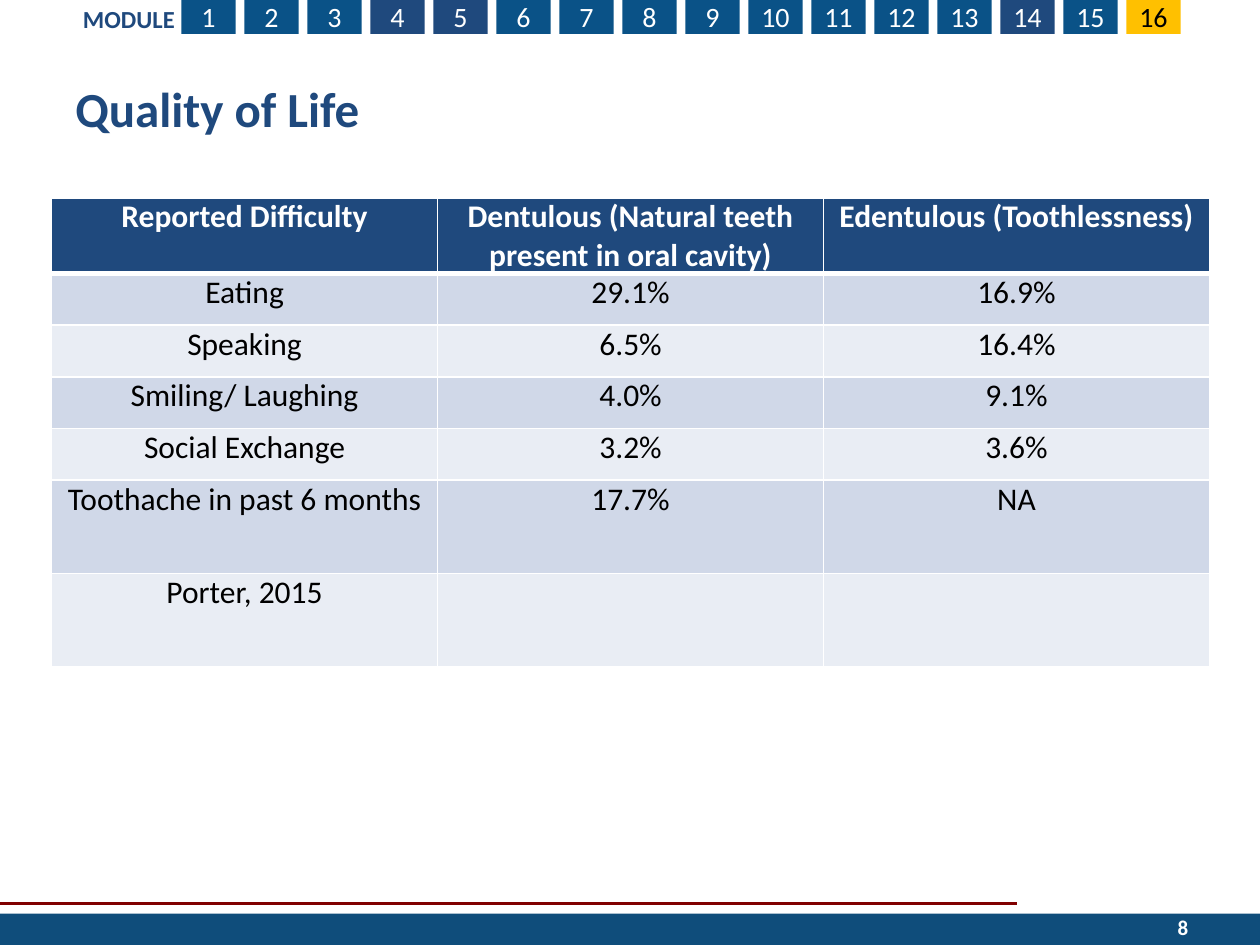
import pptx
import pptx.util
import pptx.dml.color
import pptx.enum.shapes
import pptx.enum.text
import pptx.oxml
import pptx.oxml.ns
from lxml import etree

WIDE, HIGH = 10, 7.5
NAVY, BLUE, GOLD, WHITE, BLACK = "1F497D", "0A5287", "FFC000", "FFFFFF", "000000"
BANDS = "E9EDF4", "D0D8E8"
ALIGN = pptx.enum.text.PP_ALIGN
ANCHOR = pptx.enum.text.MSO_ANCHOR
ROWS = [
    ("Reported Difficulty", "Dentulous (Natural teeth present in oral cavity)",
     "Edentulous (Toothlessness)"),
    ("Eating", "29.1%", "16.9%"),
    ("Speaking", "6.5%", "16.4%"),
    ("Smiling/ Laughing", "4.0%", "9.1%"),
    ("Social Exchange", "3.2%", "3.6%"),
    ("Toothache in past 6 months", "17.7%", "NA"),
    ("Porter, 2015", "", ""),
]
HEIGHTS = [0.6] + [0.41] * 4 + [0.74] * 2


def inch(*sizes):
    """Turn numbers into a list of lengths in inches."""
    return [pptx.util.Inches(size) for size in sizes]


def tint(code):
    """Turn a hex string into a colour."""
    return pptx.dml.color.RGBColor.from_string(code)


def write(frame, text, size, color, bold=False, align=ALIGN.LEFT):
    """Put one styled paragraph in a text frame."""
    para = frame.paragraphs[0]
    para.text = text
    para.alignment = align
    font = para.font
    font.name, font.size, font.bold = "Calibri", pptx.util.Pt(size), bold
    font.color.rgb = tint(color)


def block(slide, box, fill):
    """Draw a plain filled rectangle."""
    kind = pptx.enum.shapes.MSO_SHAPE.RECTANGLE
    shape = slide.shapes.add_shape(kind, *inch(*box))
    shape.shadow.inherit = False
    shape.fill.solid()
    shape.fill.fore_color.rgb = tint(fill)
    shape.line.fill.background()
    return shape


def label(slide, box, text, size, color, anchor=ANCHOR.MIDDLE, align=ALIGN.LEFT):
    """Add a bold line of text."""
    frame = slide.shapes.add_textbox(*inch(*box)).text_frame
    frame.word_wrap = True
    frame.vertical_anchor = anchor
    write(frame, text, size, color, True, align)


def rule(slide, ends, color, width):
    """Draw a straight line without a shadow."""
    kind = pptx.enum.shapes.MSO_CONNECTOR.STRAIGHT
    line = slide.shapes.add_connector(kind, *inch(*ends))
    line.line.color.rgb = tint(color)
    line.line.width = pptx.util.Pt(width)
    props = line._element.spPr
    etree.SubElement(props, pptx.oxml.ns.qn("a:effectLst"))


def tabs(slide):
    """Draw the row of module numbers, the current one in gold."""
    for num in range(1, 17):
        fill = GOLD if num == 16 else NAVY if num in (4, 5, 14) else BLUE
        shape = block(slide, (0.94 + num / 2, -0.01, 0.43, 0.28), fill)
        frame = shape.text_frame
        frame.margin_left = frame.margin_right = 0
        frame.margin_top = frame.margin_bottom = 0
        frame.vertical_anchor = ANCHOR.MIDDLE
        write(frame, str(num), 16, BLACK if num == 16 else WHITE, align=ALIGN.CENTER)


def edge(cell, side, width):
    """Give one side of a cell a white border."""
    props = cell._tc.get_or_add_tcPr()
    line = etree.SubElement(props, pptx.oxml.ns.qn("a:ln" + side))
    line.set("w", str(pptx.util.Pt(width)))
    fill = etree.SubElement(line, pptx.oxml.ns.qn("a:solidFill"))
    etree.SubElement(fill, pptx.oxml.ns.qn("a:srgbClr")).set("val", WHITE)


def style(cell, text, row):
    """Fill, border and write one table cell."""
    head = row == 0
    for side in "LRTB":
        thick = (row, side) in ((0, "B"), (1, "T"))
        edge(cell, side, 3 if thick else 1)
    cell.fill.solid()
    cell.fill.fore_color.rgb = tint(NAVY if head else BANDS[row % 2])
    cell.margin_left = cell.margin_right = pptx.util.Inches(0.07)
    cell.margin_top = cell.margin_bottom = 0
    write(cell.text_frame, text, 18, WHITE if head else BLACK, head, ALIGN.CENTER)


def grid(slide):
    """Build the table of reported difficulties."""
    box = inch(0.41, 1.57, 9.19, sum(HEIGHTS))
    table = slide.shapes.add_table(len(ROWS), len(ROWS[0]), *box).table
    for row, (texts, high) in enumerate(zip(ROWS, HEIGHTS)):
        table.rows[row].height = pptx.util.Inches(high)
        for col, text in enumerate(texts):
            style(table.cell(row, col), text, row)


def main():
    """Build and save the slide."""
    deck = pptx.Presentation()
    deck.slide_width, deck.slide_height = inch(WIDE, HIGH)
    slide = deck.slides.add_slide(deck.slide_layouts[6])
    rule(slide, (-0.01, 7.17, 8.07, 7.17), "800000", 1.5)
    block(slide, (0, HIGH - 0.25, WIDE, 0.25), "0F4D7B")
    tabs(slide)
    label(slide, (0.56, -0.02, 1.01, 0.34), "MODULE", 14, NAVY, ANCHOR.TOP)
    label(slide, (7.2, 7.16, 2.33, 0.4), "8", 12, WHITE, align=ALIGN.RIGHT)
    label(slide, (0.5, 0.62, 9, 0.47), "Quality of Life", 28, NAVY)
    grid(slide)
    deck.save("out.pptx")


if __name__ == "__main__":
    main()
